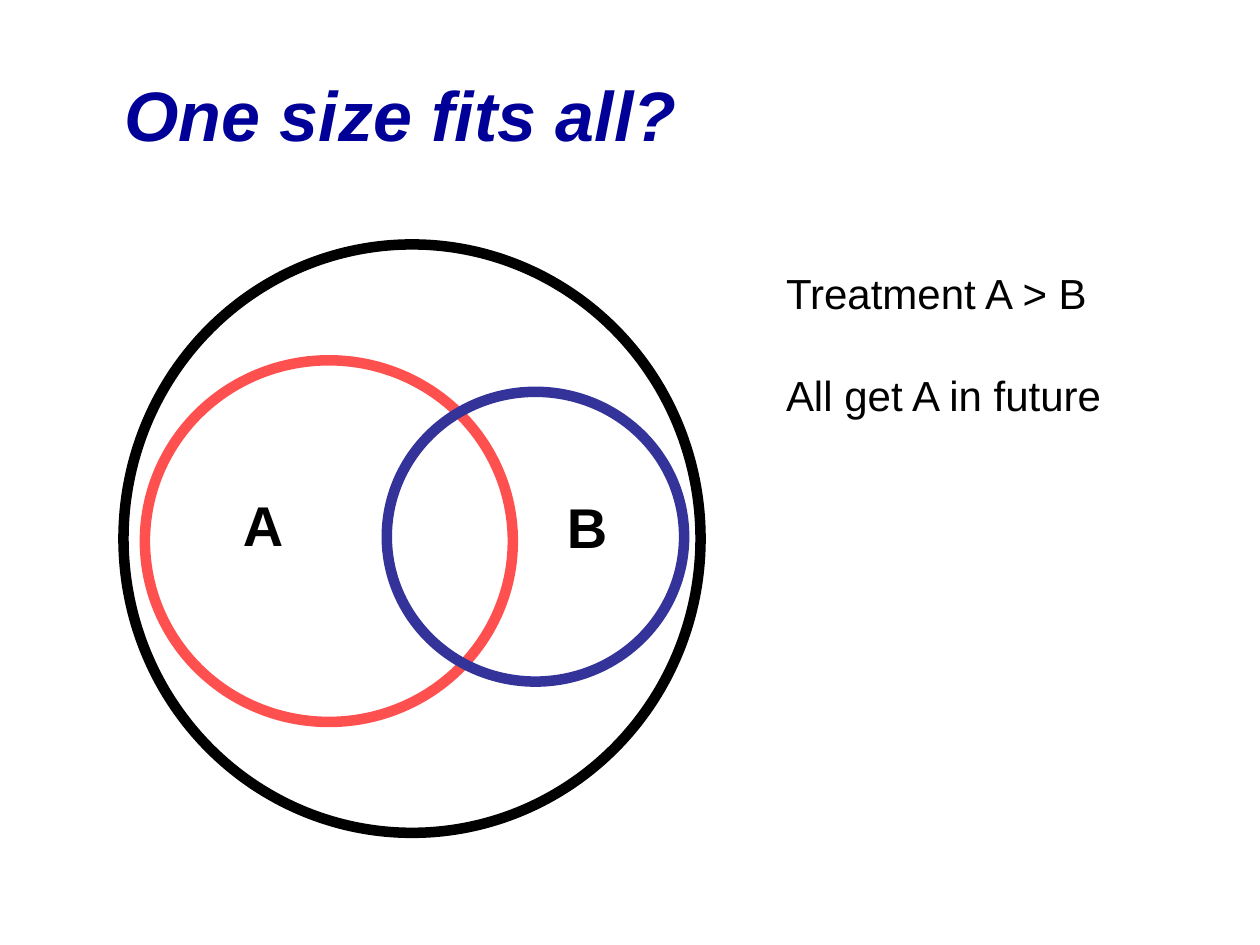
from dataclasses import dataclass

from pptx import Presentation
from pptx.dml.color import RGBColor
from pptx.enum.shapes import MSO_SHAPE
from pptx.util import Inches, Pt

OVAL = MSO_SHAPE.OVAL


@dataclass(frozen=True)
class Theme:
    font: str = "Arial"
    title_color: str = "000099"
    ink: str = "000000"
    red: str = "FF5050"
    blue: str = "333399"
    title_size: int = 40
    label_size: int = 32
    note_size: int = 24
    note_gap: int = 30
    ring_width: int = 6


theme = Theme()
deck = Presentation()
deck.slide_width, deck.slide_height = Inches(10), Inches(7.5)
page = deck.slides.add_slide(deck.slide_layouts[6])


def add_text(place, lines, size, color, bold=False, italic=False, wrap=False):
    box = page.shapes.add_textbox(*map(Inches, place))
    frame = box.text_frame
    frame.word_wrap = wrap
    for index, line in enumerate(lines):
        para = frame.add_paragraph() if index else frame.paragraphs[0]
        if index:
            para.space_before = Pt(theme.note_gap)
        span = para.add_run()
        span.text = line
        span.font.name = theme.font
        span.font.size = Pt(size)
        span.font.bold = bold
        span.font.italic = italic
        span.font.color.rgb = RGBColor.from_string(color)


# Title
add_text((0.89, 0.52, 8.13, 0.76), ["One size fits all?"],
         theme.title_size, theme.title_color, bold=True, italic=True, wrap=True)

# Everyone, with the overlapping groups A and B inside
rings = [
    ((0.98, 1.94, 4.58, 4.67), theme.ink),
    ((1.15, 2.86, 2.92, 2.87), theme.red),
    ((3.07, 3.11, 2.36, 2.3), theme.blue),
]
for place, color in rings:
    ring = page.shapes.add_shape(OVAL, *map(Inches, place))
    ring.shadow.inherit = False
    ring.fill.background()
    ring.line.color.rgb = RGBColor.from_string(color)
    ring.line.width = Pt(theme.ring_width)

# Group labels
for label, left, top in [("A", 1.83, 3.84), ("B", 4.4, 3.86)]:
    add_text((left, top, 0.52, 0.64), [label],
             theme.label_size, theme.ink, bold=True)

# Conclusion
add_text((6.14, 2.07, 2.73, 1.71), ["Treatment A > B", "All get A in future"],
         theme.note_size, theme.ink)

deck.save("out.pptx")
